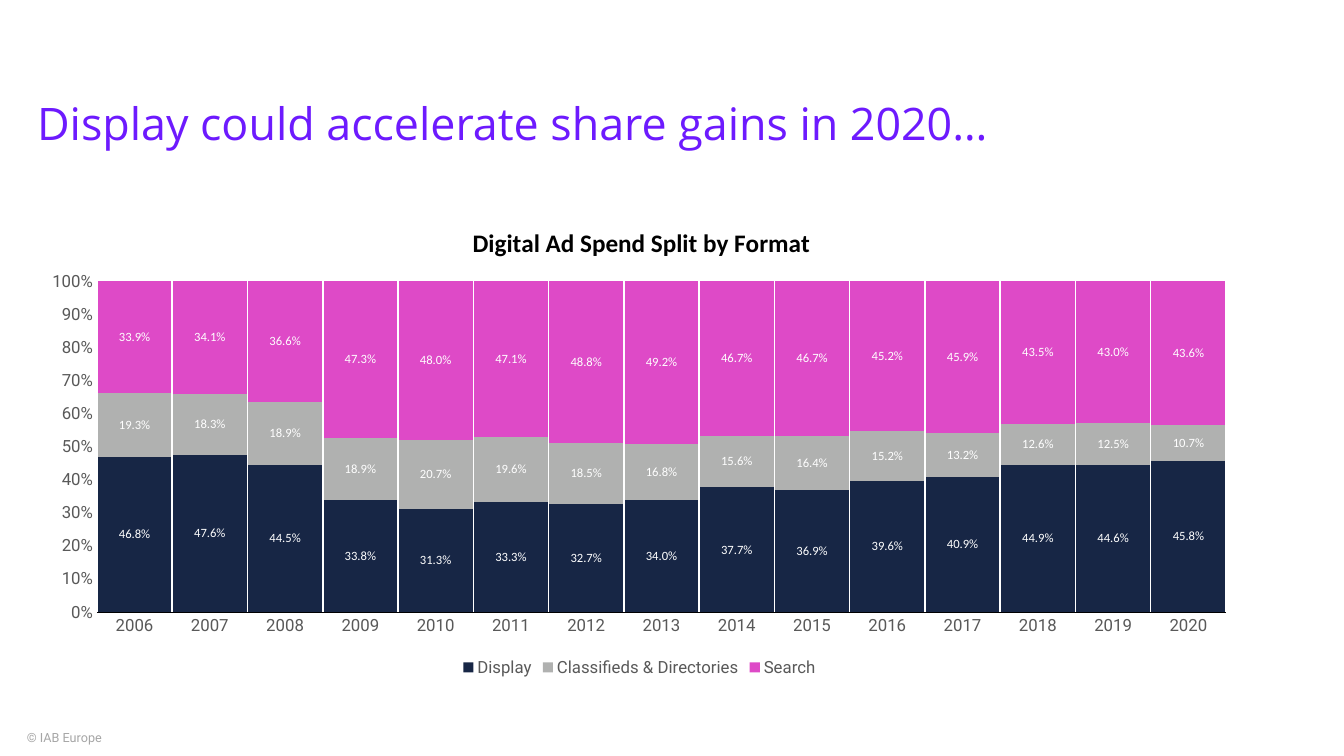
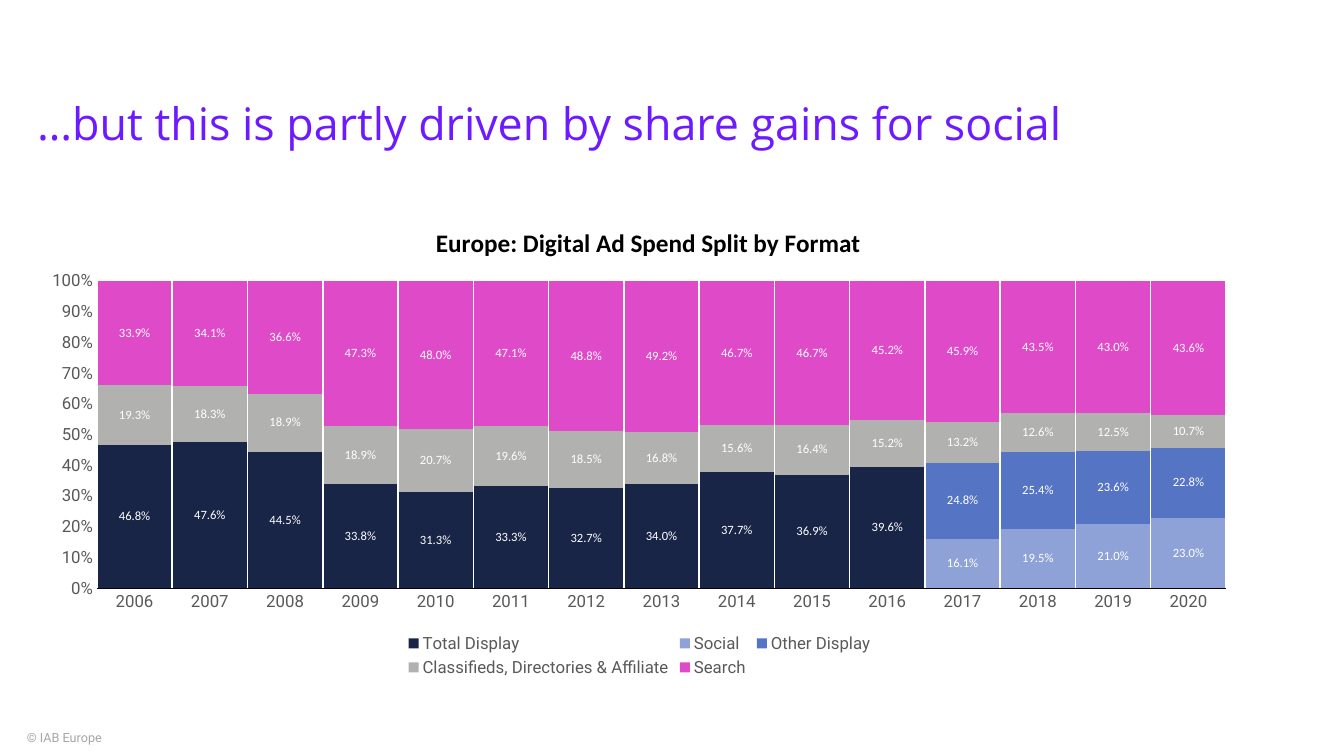
"""Build two slides on the format split of digital ad spend."""
from lxml import etree
from pptx import Presentation
from pptx.chart.data import CategoryChartData
from pptx.dml.color import RGBColor
from pptx.enum.chart import XL_CHART_TYPE as CT, XL_LEGEND_POSITION as LP, XL_TICK_MARK as TM
from pptx.enum.text import MSO_ANCHOR
from pptx.oxml.ns import qn
from pptx.util import Pt

PURPLE = RGBColor(0x6D, 0x1A, 0xFE)
NAVY = RGBColor(0x17, 0x26, 0x45)
DEEP_NAVY = RGBColor(0x19, 0x25, 0x46)
PALE_BLUE = RGBColor(0x8E, 0xA2, 0xD7)
BLUE = RGBColor(0x55, 0x74, 0xC3)
SILVER = RGBColor(0xB0, 0xB1, 0xB0)
WARM_SILVER = RGBColor(0xB1, 0xB1, 0xB0)
PINK = RGBColor(0xDE, 0x4A, 0xC7)
WHITE = RGBColor(0xFF, 0xFF, 0xFF)
BLACK = RGBColor(0x00, 0x00, 0x00)
DARK_GREY = RGBColor(0x59, 0x59, 0x59)
LIGHT_GREY = RGBColor(0xA6, 0xA6, 0xA6)

YEARS = [str(year) for year in range(2006, 2021)]
DISPLAY = [0.468, 0.476, 0.445, 0.338, 0.313, 0.333, 0.327, 0.34,
           0.377, 0.369, 0.396, 0.409, 0.449, 0.446, 0.458]
CLASSIFIEDS = [0.193, 0.183, 0.189, 0.189, 0.207, 0.196, 0.185, 0.168,
               0.156, 0.164, 0.152, 0.132, 0.126, 0.125, 0.107]
SEARCH = [0.339, 0.341, 0.366, 0.473, 0.48, 0.471, 0.488, 0.492,
          0.467, 0.467, 0.452, 0.459, 0.435, 0.43, 0.436]
SOCIAL = [0.161, 0.195, 0.21, 0.23]
OTHER_DISPLAY = [0.248, 0.254, 0.236, 0.228]
SPLIT = YEARS.index("2017")
BEFORE = [None] * SPLIT
AFTER = [None] * (len(YEARS) - SPLIT)

SLIDES = [
    ("Display could accelerate share gains in 2020…",
     "Digital Ad Spend Split by Format", 0.36, 0.69,
     [("Display", DISPLAY, NAVY),
      ("Classifieds & Directories", CLASSIFIEDS, SILVER),
      ("Search", SEARCH, PINK)]),
    ("…but this is partly driven by share gains for social",
     "Europe: Digital Ad Spend Split by Format", 0.33, 0.64,
     [("Total Display", DISPLAY[:SPLIT] + AFTER, DEEP_NAVY),
      ("Social", BEFORE + SOCIAL, PALE_BLUE),
      ("Other Display", BEFORE + OTHER_DISPLAY, BLUE),
      ("Classifieds, Directories & Affiliate", CLASSIFIEDS, WARM_SILVER),
      ("Search", SEARCH, PINK)]),
]


def style(font, name, size, color, bold=False):
    font.name, font.size, font.bold = name, Pt(size), bold
    font.color.rgb = color


def place(parent, index, **settings):
    for old in parent.findall(qn("c:layout")):
        parent.remove(old)
    layout = etree.Element(qn("c:layout"))
    manual = etree.SubElement(layout, qn("c:manualLayout"))
    for tag, value in settings.items():
        etree.SubElement(manual, qn(f"c:{tag}")).set("val", str(value))
    parent.insert(index, layout)


prs = Presentation()
prs.slide_width, prs.slide_height = Pt(960), Pt(540)

for title, chart_title, title_x, plot_h, series in SLIDES:
    s = prs.slides.add_slide(prs.slide_layouts[6])

    for text, box, anchor, font in [
        ("© IAB Europe", (12.2, 517.7, 260, 18), MSO_ANCHOR.TOP, ("Roboto", 9, LIGHT_GREY)),
        (title, (19.4, 53.3, 874.8, 72.7), MSO_ANCHOR.MIDDLE, ("Open Sans", 32, PURPLE)),
    ]:
        tf = s.shapes.add_textbox(*map(Pt, box)).text_frame
        tf.word_wrap = True
        tf.vertical_anchor = anchor
        p = tf.paragraphs[0]
        p.text = text
        p.line_spacing = 0.9 if text == title else 1.0
        style(p.font, *font)

    data = CategoryChartData(number_format="0.0%")
    data.categories = YEARS
    for name, values, _ in series:
        data.add_series(name, values)
    chart = s.shapes.add_chart(CT.COLUMN_STACKED_100, Pt(19.4), Pt(144),
                               Pt(874.8), Pt(342.7), data).chart
    style(chart.font, "Calibri", 10, BLACK)

    chart.has_title = True
    p = chart.chart_title.text_frame.paragraphs[0]
    p.text = chart_title
    style(p.font, "Calibri", 18, BLACK, True)
    chart.chart_title.include_in_layout = False
    place(chart.chart_title.element, 1, xMode="edge", yMode="edge", x=title_x, y=0.04)

    plot = chart.plots[0]
    plot.gap_width, plot.overlap = 2, 100
    plot.vary_by_categories = False
    plot_area = chart.element.find(".//" + qn("c:plotArea"))
    place(plot_area, 0, layoutTarget="inner", xMode="edge", yMode="edge",
          x=0.057, y=0.166, w=0.922, h=plot_h)

    for ser, (_, _, color) in zip(plot.series, series):
        ser.format.fill.solid()
        ser.format.fill.fore_color.rgb = color
        labels = ser.data_labels
        labels.show_value = True
        labels.number_format, labels.number_format_is_linked = "0.0%", False
        style(labels.font, "Calibri", 9, WHITE)

    for axis in (chart.category_axis, chart.value_axis):
        axis.major_tick_mark = axis.minor_tick_mark = TM.NONE
        style(axis.tick_labels.font, "Roboto", 12, DARK_GREY)
    line = chart.category_axis.format.line
    line.color.rgb, line.width = BLACK, Pt(0.75)

    axis = chart.value_axis
    axis.minimum_scale, axis.maximum_scale, axis.major_unit = 0, 1, 0.1
    axis.tick_labels.number_format = "0%"
    axis.tick_labels.number_format_is_linked = False
    axis.format.line.fill.background()
    line = axis.major_gridlines.format.line
    line.color.rgb, line.width = WHITE, Pt(0.75)

    chart.has_legend = True
    chart.legend.position = LP.BOTTOM
    chart.legend.include_in_layout = False
    style(chart.legend.font, "Roboto", 12, DARK_GREY)

prs.save("out.pptx")
